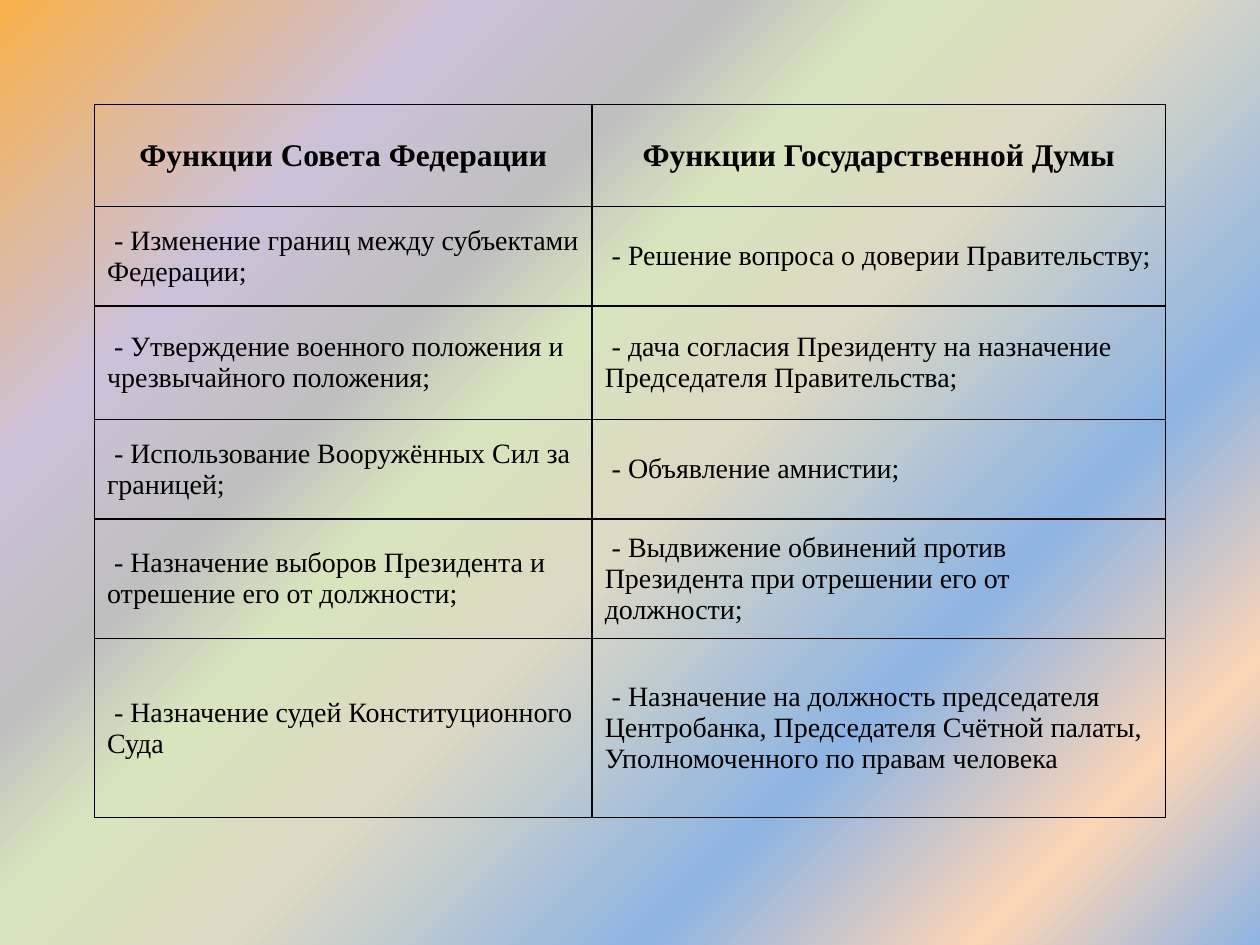
from dataclasses import dataclass

from lxml import etree
from pptx import Presentation
from pptx.dml.color import RGBColor
from pptx.enum.text import MSO_ANCHOR, PP_ALIGN
from pptx.oxml.ns import qn
from pptx.util import Inches, Pt

MIDDLE = MSO_ANCHOR.MIDDLE
CENTER, LEFT = PP_ALIGN.CENTER, PP_ALIGN.LEFT
BLANK_LAYOUT = 6
BORDER_SIDES = ("a:lnL", "a:lnR", "a:lnT", "a:lnB")

COLUMN_WIDTHS = (3.95, 4.55)
ROW_HEIGHTS = (0.81, 0.79, 0.9, 0.79, 0.95, 1.42)
FUNCTIONS = (
    ("Функции Совета Федерации", "Функции Государственной Думы"),
    (" - Изменение границ между субъектами Федерации;",
     " - Решение вопроса о доверии Правительству;"),
    (" - Утверждение военного положения и чрезвычайного положения;",
     " - дача согласия Президенту на назначение Председателя Правительства;"),
    (" - Использование Вооружённых Сил за границей;",
     " - Объявление амнистии;"),
    (" - Назначение выборов Президента и отрешение его от должности;",
     " - Выдвижение обвинений против Президента при отрешении его от должности;"),
    (" - Назначение судей Конституционного Суда",
     " - Назначение на должность председателя Центробанка, "
     "Председателя Счётной палаты, Уполномоченного по правам человека"),
)


@dataclass(frozen=True)
class Theme:
    font: str = "Times New Roman"
    ink: str = "000000"
    header_size: int = 18
    body_size: int = 16
    border_width: int = 1
    background: tuple = (
        (0, "8EB4E3"), (13, "FCD5B5"), (28, "8EB4E3"), (47, "DDD9C3"),
        (59, "D7E4BD"), (67, "BFBFBF"), (79, "CCC1DA"), (100, "F8B049"),
    )


class SlideBuilder:
    """Draws themed elements on the current slide."""

    def __init__(self, slide, theme):
        self.slide = slide
        self.theme = theme

    def add_background(self):
        self.slide.background.fill.gradient()
        gradient = next(self.slide.element.iter(qn("a:gradFill")))
        for child in list(gradient):
            gradient.remove(child)
        stops = etree.SubElement(gradient, qn("a:gsLst"))
        for position, color in self.theme.background:
            stop = etree.SubElement(stops, qn("a:gs"), {"pos": str(position * 1000)})
            etree.SubElement(stop, qn("a:srgbClr"), {"val": color})
        circle = etree.SubElement(gradient, qn("a:path"), {"path": "circle"})
        etree.SubElement(circle, qn("a:fillToRect"), {"l": "100000", "t": "100000"})

    def add_table(self, left, top, column_widths, row_heights, texts):
        frame = self.slide.shapes.add_table(
            len(row_heights), len(column_widths), Inches(left), Inches(top),
            Inches(sum(column_widths)), Inches(sum(row_heights)))
        table = frame.table
        table.first_row = table.horz_banding = False
        for column, width in zip(table.columns, column_widths):
            column.width = Inches(width)
        for index, (row, height) in enumerate(zip(table.rows, row_heights)):
            row.height = Inches(height)
            for cell, text in zip(row.cells, texts[index]):
                self.format_cell(cell, text, is_header=index == 0)

    def format_cell(self, cell, text, is_header):
        self.add_borders(cell)
        cell.fill.background()
        cell.vertical_anchor = MIDDLE
        paragraph = cell.text_frame.paragraphs[0]
        paragraph.alignment = CENTER if is_header else LEFT
        run = paragraph.add_run()
        run.text = text
        run.font.name = self.theme.font
        run.font.size = Pt(self.theme.header_size if is_header else self.theme.body_size)
        run.font.bold = is_header
        run.font.color.rgb = RGBColor.from_string(self.theme.ink)

    def add_borders(self, cell):
        properties = cell._tc.get_or_add_tcPr()
        for side in BORDER_SIDES:
            line = etree.SubElement(
                properties, qn(side), {"w": str(Pt(self.theme.border_width))})
            fill = etree.SubElement(line, qn("a:solidFill"))
            etree.SubElement(fill, qn("a:srgbClr"), {"val": self.theme.ink})


def main():
    presentation = Presentation()
    presentation.slide_width = Inches(10)
    presentation.slide_height = Inches(7.5)
    slide = presentation.slides.add_slide(presentation.slide_layouts[BLANK_LAYOUT])
    builder = SlideBuilder(slide, Theme())
    builder.add_background()
    builder.add_table(0.75, 0.83, COLUMN_WIDTHS, ROW_HEIGHTS, FUNCTIONS)
    presentation.save("out.pptx")


if __name__ == "__main__":
    main()
